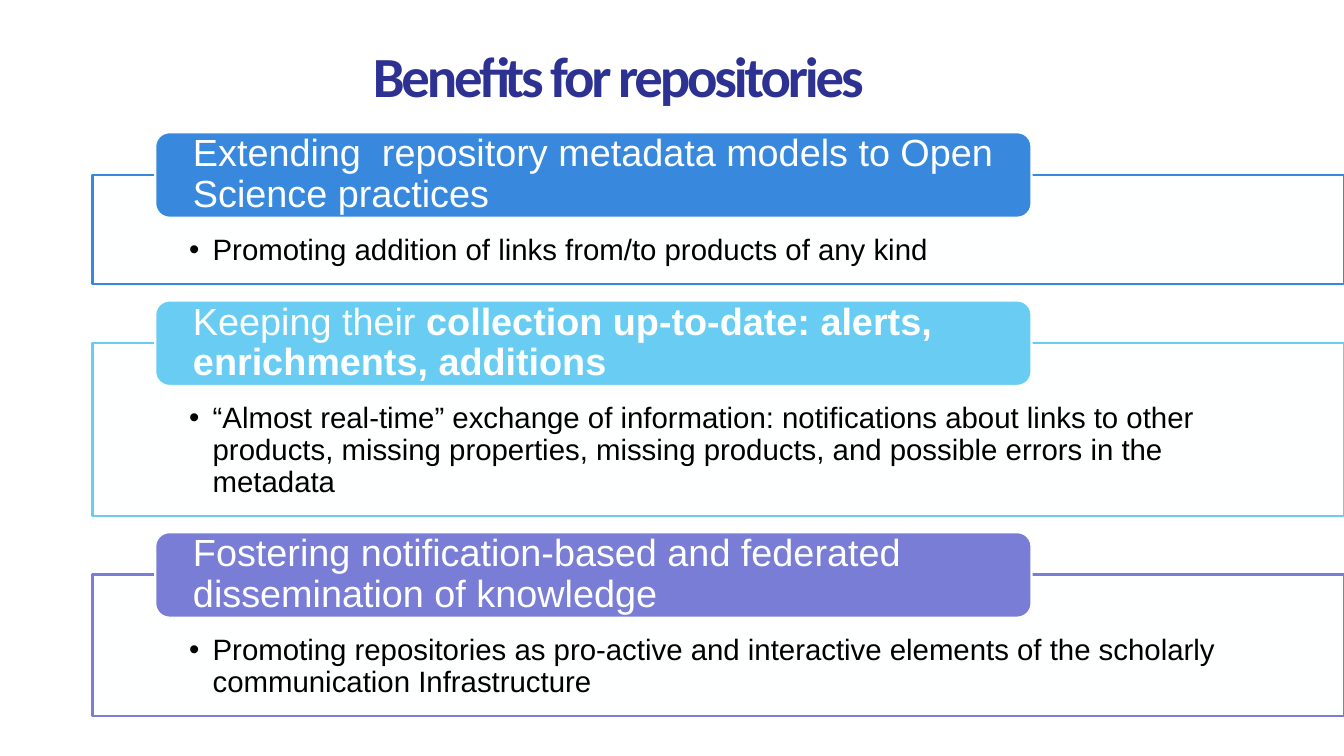
import pptx
import pptx.util
import pptx.dml.color
import pptx.enum.shapes
import pptx.enum.text
from lxml import etree
from pptx.oxml.ns import qn

RGB = pptx.dml.color.RGBColor
NAVY = RGB(0x2D, 0x32, 0x92)
BLUE = RGB(0x38, 0x89, 0xDE)
SKY = RGB(0x69, 0xCD, 0xF3)
VIOLET = RGB(0x79, 0x7D, 0xD5)
WHITE = RGB(0xFE, 0xFF, 0xFF)
BLACK = RGB(0, 0, 0)

SHAPE = pptx.enum.shapes.MSO_SHAPE
ALIGN = pptx.enum.text.PP_ALIGN
ANCHOR = pptx.enum.text.MSO_ANCHOR
Pt = pptx.util.Pt

prs = pptx.Presentation()
prs.slide_width = pptx.util.Inches(17.78)
prs.slide_height = pptx.util.Inches(10)
COL = prs.slide_width / 100
ROW = prs.slide_height / 100
s = prs.slides.add_slide(prs.slide_layouts[6])


def add_box(kind, left, top, width, height, fill, line):
    sp = s.shapes.add_shape(kind, int(left * COL), int(top * ROW),
                            int(width * COL), int(height * ROW))
    sp.shadow.inherit = False
    sp.fill.solid()
    sp.fill.fore_color.rgb = fill
    sp.line.color.rgb = line
    sp.line.width = Pt(2)
    return sp


def add_text(sp, runs, size, color, font, align, anchor, insets):
    tf = sp.text_frame
    tf.word_wrap = True
    tf.vertical_anchor = anchor
    side, top, bottom = insets
    tf.margin_left = tf.margin_right = int(side * COL)
    tf.margin_top, tf.margin_bottom = int(top * ROW), int(bottom * ROW)
    p = tf.paragraphs[0]
    p.alignment = align
    for text, bold in runs:
        r = p.add_run()
        r.text = text
        r.font.name = font
        r.font.size = Pt(size)
        r.font.bold = bold
        r.font.color.rgb = color
    return p


title = s.shapes.add_textbox(int(4.39 * COL), int(3.7 * ROW), int(83.24 * COL), int(12.5 * ROW))
p = add_text(title, [("Benefits for repositories", True)], 54, NAVY, "Calibri",
             ALIGN.CENTER, ANCHOR.MIDDLE, (0, 0, 0))
p.runs[0].font._element.set("spc", "-300")

benefits = [
    (BLUE, 14.5,
     [("Extending  repository metadata models to Open Science practices", False)],
     "Promoting addition of links from/to products of any kind"),
    (SKY, 22.9,
     [("Keeping their ", False),
      ("collection up-to-date: alerts, enrichments, additions", True)],
     "“Almost real-time” exchange of information: notifications about links to other "
     "products, missing properties, missing products, and possible errors in the metadata"),
    (VIOLET, 18.7,
     [("Fostering notification-based and federated dissemination of knowledge", False)],
     "Promoting repositories as pro-active and interactive elements of the scholarly "
     "communication Infrastructure"),
]

GAP = 7.75
top = 23.1
for color, height, heading, detail in benefits:
    panel = add_box(SHAPE.RECTANGLE, 6.88, top, 93.1, height, WHITE, color)
    fill_color = panel.fill._xPr.find(qn("a:solidFill"))[0]
    etree.SubElement(fill_color, qn("a:alpha")).set("val", "90000")
    p = add_text(panel, [(detail, False)], 28, BLACK, "Arial",
                 ALIGN.LEFT, ANCHOR.TOP, (7.2, 8, 2.2))
    pPr = p._p.get_or_add_pPr()
    pPr.set("marL", str(pptx.util.Inches(0.31)))
    pPr.set("indent", str(-pptx.util.Inches(0.31)))
    etree.SubElement(pPr, qn("a:buFont")).set("typeface", "Arial")
    etree.SubElement(pPr, qn("a:buChar")).set("char", "•")
    p.line_spacing = 0.9

    tab = add_box(SHAPE.ROUNDED_RECTANGLE, 11.55, top - 5.6, 65.2, 11.3, color, WHITE)
    p = add_text(tab, heading, 36, WHITE, "Arial", ALIGN.LEFT, ANCHOR.MIDDLE, (2.5, 0, 0))
    p.line_spacing = 0.9
    top += height + GAP

prs.save("out.pptx")
